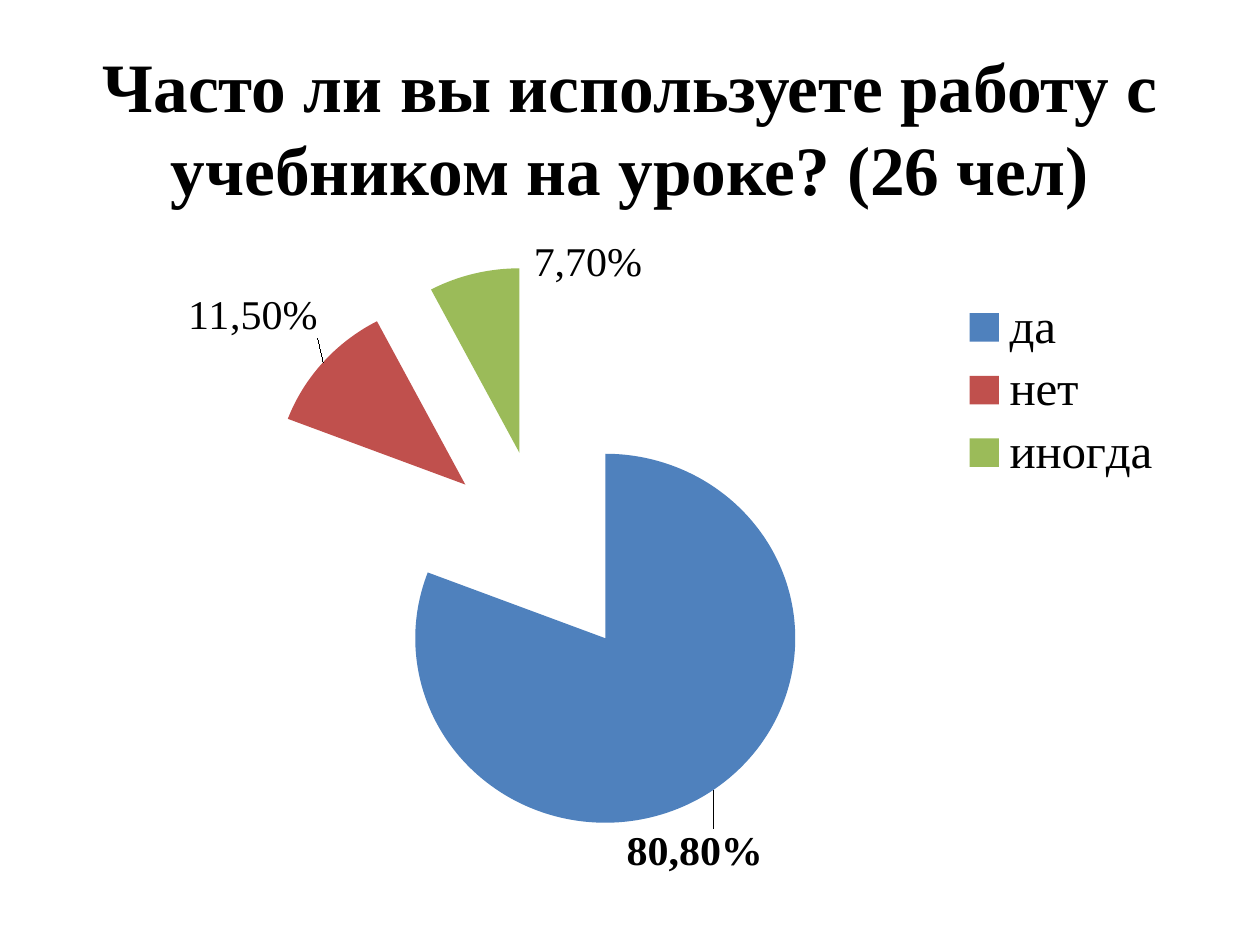
from lxml.etree import SubElement, Element
from pptx import Presentation
from pptx.chart.data import CategoryChartData
from pptx.dml.color import RGBColor
from pptx.enum.chart import XL_CHART_TYPE, XL_LABEL_POSITION, XL_LEGEND_POSITION
from pptx.enum.text import MSO_ANCHOR, PP_ALIGN
from pptx.oxml.ns import qn
from pptx.util import Cm, Pt

TITLE = "Часто ли вы используете работу с учебником на уроке? (26 чел)"
BLACK = RGBColor(0x00, 0x00, 0x00)
BLUE = RGBColor(0x4F, 0x81, 0xBD)
RED = RGBColor(0xC0, 0x50, 0x4D)
GREEN = RGBColor(0x9B, 0xBB, 0x59)
FONT = "Times New Roman"
EXPLOSION = 56

ANSWERS = [
    {"name": "да", "value": 0.808, "label": "80,80%", "color": BLUE, "bold": True, "shift": (-0.08, 0.05)},
    {"name": "нет", "value": 0.115, "label": "11,50%", "color": RED, "bold": False, "shift": (0, -0.03)},
    {"name": "иногда", "value": 0.077, "label": "7,70%", "color": GREEN, "bold": False, "shift": (0.15, 0.02)},
]
PLOT_AREA = {"layoutTarget": "inner", "xMode": "edge", "yMode": "edge",
             "x": 0.03, "y": 0.04, "w": 0.79, "h": 0.9}
LEGEND_AREA = {"xMode": "edge", "yMode": "edge", "x": 0.78, "y": 0.08, "w": 0.2, "h": 0.31}


def style_font(font, size, bold=False):
    font.name = FONT
    font.size = Pt(size)
    font.bold = bold
    font.color.rgb = BLACK


def manual_layout(settings):
    layout = Element(qn("c:layout"))
    manual = SubElement(layout, qn("c:manualLayout"))
    for name, value in settings.items():
        SubElement(manual, qn(f"c:{name}")).set("val", str(value))
    return layout


def replace_layout(parent, settings, previous=None):
    for old_layout in parent.findall(qn("c:layout")):
        parent.remove(old_layout)
    if previous is None:
        parent.insert(0, manual_layout(settings))
    else:
        parent.find(qn(previous)).addnext(manual_layout(settings))


def add_title(slide):
    title = slide.shapes.add_textbox(Cm(1.27), Cm(0.76), Cm(22.86), Cm(3.56))
    text_frame = title.text_frame
    text_frame.word_wrap = True
    text_frame.vertical_anchor = MSO_ANCHOR.MIDDLE
    text_frame.text = TITLE
    paragraph = text_frame.paragraphs[0]
    paragraph.alignment = PP_ALIGN.CENTER
    style_font(paragraph.runs[0].font, 39.6, True)


def add_answer_chart(slide):
    chart_data = CategoryChartData(number_format="0.00%")
    chart_data.categories = [answer["name"] for answer in ANSWERS]
    chart_data.add_series("Series 1", [answer["value"] for answer in ANSWERS])
    chart = slide.shapes.add_chart(
        XL_CHART_TYPE.PIE, Cm(1.27), Cm(4.45), Cm(22.86), Cm(13.28), chart_data
    ).chart
    chart.has_title = False
    style_font(chart.font, 10)

    chart.has_legend = True
    legend = chart.legend
    legend.position = XL_LEGEND_POSITION.RIGHT
    legend.include_in_layout = False
    style_font(legend.font, 28)
    replace_layout(legend._element, LEGEND_AREA, "c:legendPos")

    plot = chart.plots[0]
    plot.vary_by_categories = True
    series = plot.series[0]
    for index, answer in enumerate(ANSWERS):
        point = series.points[index]
        point.format.fill.solid()
        point.format.fill.fore_color.rgb = answer["color"]
        label = point.data_label
        label.text_frame.text = answer["label"]
        style_font(label.text_frame.paragraphs[0].runs[0].font, 24, answer["bold"])
        label.position = XL_LABEL_POSITION.OUTSIDE_END

    labels = series.data_labels
    labels.show_value = True
    labels.number_format = "0.00%"
    labels.number_format_is_linked = False
    style_font(labels.font, 24)
    for label, answer in zip(series._element.iter(qn("c:dLbl")), ANSWERS):
        replace_layout(label, dict(zip("xy", answer["shift"])), "c:idx")

    explosion = Element(qn("c:explosion"))
    explosion.set("val", str(EXPLOSION))
    series._element.find(qn("c:dPt")).addprevious(explosion)
    replace_layout(chart._chartSpace.find(".//" + qn("c:plotArea")), PLOT_AREA)


def main():
    presentation = Presentation()
    presentation.slide_width = Cm(25.4)
    presentation.slide_height = Cm(19.05)
    slide = presentation.slides.add_slide(presentation.slide_layouts[6])
    add_title(slide)
    add_answer_chart(slide)
    presentation.save("out.pptx")


if __name__ == "__main__":
    main()
